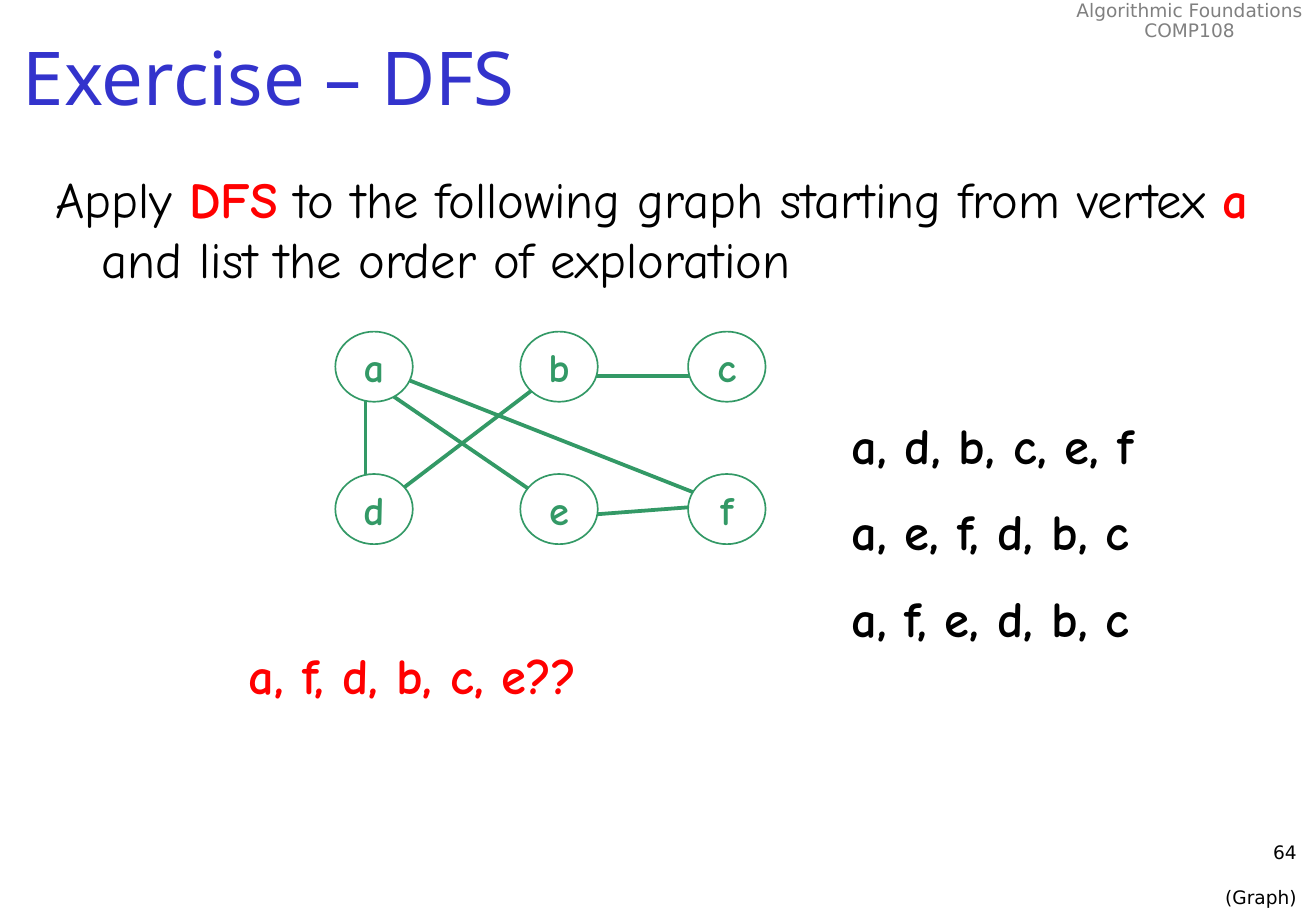
from lxml import etree
from pptx import Presentation
from pptx import util as u
from pptx.dml.color import RGBColor
from pptx.enum import shapes, text
from pptx.oxml.ns import qn

COLORS = {"title": "3333CC", "graph": "339966", "ink": "000000",
          "accent": "FF0000", "header": "808080", "paper": "FFFFFF"}
HAND, SANS, TITLE = "Comic Neue", "DejaVu Sans", "Noto Sans"
WIDTH, HEIGHT = u.Inches(10.83), u.Inches(7.5)

# Vertices and edge ends as shares of the graph's box
COLUMNS, ROWS = (0, 0.43, 0.82), (0, 0.67)
VERTICES = ("abc", "def")
VERTEX_SIZE = (0.18, 0.33)
EDGES = {
    "af": (0.11, 0.18, 0.9, 0.81),
    "bc": (0.54, 0.21, 0.93, 0.21),
    "ef": (0.54, 0.87, 0.93, 0.81),
    "ad": (0.07, 0.27, 0.07, 0.81),
    "ae": (0.11, 0.27, 0.5, 0.81),
    "db": (0.11, 0.81, 0.5, 0.21),
}


def rgb(name):
    return RGBColor.from_string(COLORS[name])


def grid(left, top, width, height):
    """Box on a grid of 100 columns by 100 rows."""
    return [round(share * side / 100) for share, side in
            zip((left, top, width, height), (WIDTH, HEIGHT) * 2)]


def style(run, font, size, color, bold=False):
    run.font.name, run.font.size, run.font.bold = font, u.Pt(size), bold
    run.font.color.rgb = rgb(color)


def add_text(slide, box, lines, font, size, color, bold=False,
             align=text.PP_ALIGN.LEFT, wrap=True):
    frame = slide.shapes.add_textbox(*box).text_frame
    frame.word_wrap = wrap
    frame.text = "\n".join(lines)
    for paragraph in frame.paragraphs:
        paragraph.alignment = align
        style(paragraph.runs[0], font, size, color, bold)
    return frame


def add_header(slide, box):
    header = add_text(slide, box, ["Algorithmic Foundations", "COMP108"], SANS,
                      11, "header", align=text.PP_ALIGN.CENTER, wrap=False)
    for paragraph in header.paragraphs:
        paragraph.line_spacing = 0.9


def add_title(slide, box):
    title = add_text(slide, box, ["Exercise – DFS"], TITLE, 44, "title")
    title.vertical_anchor = text.MSO_ANCHOR.MIDDLE


def add_task(slide, box):
    task = add_text(slide, box, ["Apply "], HAND, 30, "ink").paragraphs[0]
    properties = task._p.get_or_add_pPr()
    properties.set("marL", str(u.Inches(0.38)))
    properties.set("indent", str(u.Inches(-0.38)))
    for words, key in (("DFS", True),
                       (" to the following graph starting from vertex ", False),
                       ("a", True),
                       (" and list the order of exploration", False)):
        run = task.add_run()
        run.text = words
        style(run, HAND, 30, "accent" if key else "ink", key)


def add_edge(slide, ends):
    edge = slide.shapes.add_connector(shapes.MSO_CONNECTOR.STRAIGHT, *ends)
    edge.line.color.rgb = rgb("graph")
    edge.line.width = u.Pt(2.25)
    etree.SubElement(edge._element.spPr, qn("a:effectLst"))


def add_vertex(slide, box, label):
    vertex = slide.shapes.add_shape(shapes.MSO_SHAPE.OVAL, *box)
    vertex.shadow.inherit = False
    vertex.fill.solid()
    vertex.fill.fore_color.rgb = rgb("paper")
    vertex.line.color.rgb = rgb("graph")
    vertex.line.width = u.Pt(1)
    frame = vertex.text_frame
    frame.word_wrap = False
    frame.vertical_anchor = text.MSO_ANCHOR.MIDDLE
    frame.text = label
    frame.paragraphs[0].alignment = text.PP_ALIGN.CENTER
    style(frame.paragraphs[0].runs[0], HAND, 24, "graph", True)


def add_graph(slide, box):
    left, top, width, height = box

    def place(x, y):
        return round(left + x * width), round(top + y * height)

    # Edges lie behind the vertices
    for x1, y1, x2, y2 in EDGES.values():
        add_edge(slide, place(x1, y1) + place(x2, y2))
    size = (round(VERTEX_SIZE[0] * width), round(VERTEX_SIZE[1] * height))
    for y, labels in zip(ROWS, VERTICES):
        for x, label in zip(COLUMNS, labels):
            add_vertex(slide, place(x, y) + size, label)


def add_orders(slide, box):
    left, top, width, height = box
    orders = ("a, d, b, c, e, f", "a, e, f, d, b, c", "a, f, e, d, b, c")
    pitch = round(height / len(orders))
    for row, order in enumerate(orders):
        add_text(slide, (left, top + row * pitch, width, pitch),
                 [order], HAND, 30, "ink", True)


def add_wrong_order(slide, box):
    add_text(slide, box, ["a, f, d, b, c, e??"], HAND, 30, "accent", True)


def add_footer(slide, box):
    footer = add_text(slide, box, ["64", "(Graph)"], SANS, 11, "ink",
                      align=text.PP_ALIGN.RIGHT)
    footer.paragraphs[1].space_before = u.Pt(13.5)


def main():
    deck = Presentation()
    deck.slide_width, deck.slide_height = WIDTH, HEIGHT
    slide = deck.slides.add_slide(deck.slide_layouts[6])
    add_header(slide, grid(80.79, -0.53, 19.21, 5.73))
    add_title(slide, grid(0.83, 0, 99.17, 16.67))
    add_task(slide, grid(3.32, 17.73, 94.18, 16))
    add_graph(slide, grid(25.48, 36.4, 32.69, 23.33))
    add_orders(slide, grid(63.8, 44.8, 31.58, 28.4))
    add_wrong_order(slide, grid(18, 70, 36, 8.13))
    add_footer(slide, grid(78.58, 91.6, 20.87, 6.67))
    deck.save("out.pptx")


if __name__ == "__main__":
    main()
